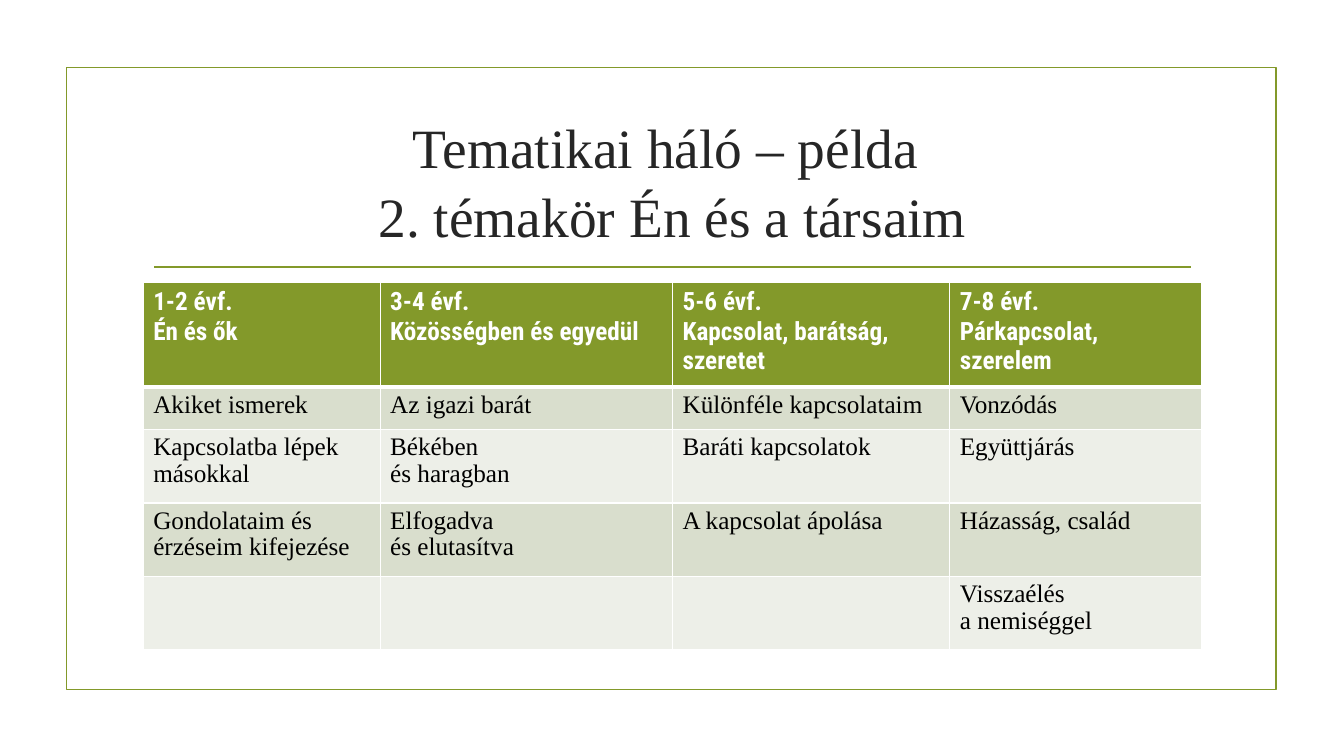
from lxml.etree import SubElement
from pptx import Presentation
from pptx.dml.color import RGBColor
from pptx.enum.shapes import MSO_CONNECTOR, MSO_SHAPE
from pptx.enum.text import MSO_ANCHOR, MSO_AUTO_SIZE, PP_ALIGN
from pptx.oxml.ns import qn
from pptx.util import Inches, Pt

GREEN = RGBColor(0x83, 0x99, 0x2A)
SAGE = RGBColor(0xD9, 0xDE, 0xCD)
PALE = RGBColor(0xED, 0xEF, 0xE8)
WHITE = RGBColor(0xFF, 0xFF, 0xFF)
BLACK = RGBColor(0, 0, 0)
DARK = RGBColor(0x26, 0x26, 0x26)
SERIF = "Times New Roman"
SANS = "Roboto Condensed"

WIDTHS = [2.35, 2.9, 2.75, 2.5]
HEIGHTS = [1.04, 0.42, 0.73, 0.73, 0.73]
# In the cells, \n starts a paragraph and \v breaks a line
ROWS = [
    ["1-2 évf.\nÉn és ők", "3-4 évf.\nKözösségben és egyedül",
     "5-6 évf.\nKapcsolat, barátság, szeretet",
     "7-8 évf.\nPárkapcsolat, szerelem"],
    ["Akiket ismerek", "Az igazi barát", "Különféle kapcsolataim", "Vonzódás"],
    ["Kapcsolatba lépek másokkal", "Békében \vés haragban",
     "Baráti kapcsolatok", "Együttjárás"],
    ["Gondolataim és érzéseim kifejezése", "Elfogadva \vés elutasítva",
     "A kapcsolat ápolása", "Házasság, család"],
    ["", "", "", "Visszaélés \va nemiséggel"],
]


def set_font(font, name, size, color, bold=False):
    font.name = name
    font.size = Pt(size)
    font.color.rgb = color
    font.bold = bold


def add_frame(slide, left, top, width, height):
    # Green outline around the slide
    frame = slide.shapes.add_shape(MSO_SHAPE.RECTANGLE, Inches(left), Inches(top),
                                   Inches(width), Inches(height))
    frame.shadow.inherit = False
    frame.fill.background()
    frame.line.color.rgb = GREEN
    frame.line.width = Pt(1.25)

    # Rule under the title
    y = Inches(top + 1.98)
    rule = slide.shapes.add_connector(MSO_CONNECTOR.STRAIGHT, Inches(left + 0.87), y,
                                      Inches(left + width - 0.85), y)
    rule.line.color.rgb = GREEN
    rule.line.width = Pt(1.25)
    SubElement(rule._element.spPr, qn("a:effectLst"))


def fill_title(slide, left, top, width, height):
    title = slide.shapes.title
    title.left, title.top = Inches(left), Inches(top)
    title.width, title.height = Inches(width), Inches(height)
    frame = title.text_frame
    frame.text = "Tematikai háló – példa \v2. témakör Én és a társaim"
    frame.auto_size = MSO_AUTO_SIZE.NONE
    frame.word_wrap = True
    frame.vertical_anchor = MSO_ANCHOR.MIDDLE
    para = frame.paragraphs[0]
    para.alignment = PP_ALIGN.CENTER
    para.line_spacing = 1.03
    for run in para.runs:
        set_font(run.font, SERIF, 39.6, DARK)


def set_edges(cell, head):
    # White cell borders, thicker under the header
    props = cell._tc.get_or_add_tcPr()
    for i, tag in enumerate(["a:lnL", "a:lnR", "a:lnT", "a:lnB"]):
        width = Pt(3) if head and tag == "a:lnB" else Pt(1)
        edge = props.makeelement(qn(tag), {"w": str(width)})
        fill = SubElement(edge, qn("a:solidFill"))
        SubElement(fill, qn("a:srgbClr"), val=str(WHITE))
        props.insert(i, edge)


def fill_cell(cell, text, row):
    head = row == 0
    cell.fill.solid()
    cell.fill.fore_color.rgb = GREEN if head else SAGE if row % 2 else PALE
    set_edges(cell, head)
    cell.text_frame.text = text
    for para in cell.text_frame.paragraphs:
        para.line_spacing = 1.0 if head else 0.95
        if not para.runs:
            para.font.size = Pt(18)
        for run in para.runs:
            set_font(run.font, SANS if head else SERIF, 18,
                     WHITE if head else BLACK, head)


def add_grid(slide, left, top):
    table = slide.shapes.add_table(
        len(ROWS), len(WIDTHS), Inches(left), Inches(top),
        Inches(sum(WIDTHS)), Inches(sum(HEIGHTS))).table
    for col, width in zip(table.columns, WIDTHS):
        col.width = Inches(width)
    for r, texts in enumerate(ROWS):
        table.rows[r].height = Inches(HEIGHTS[r])
        for c, text in enumerate(texts):
            fill_cell(table.cell(r, c), text, r)


def main():
    deck = Presentation()
    deck.slide_width, deck.slide_height = Inches(13.33), Inches(7.5)
    slide = deck.slides.add_slide(deck.slide_layouts[5])
    add_frame(slide, 0.66, 0.67, 12, 6.17)
    fill_title(slide, 1.42, 1.07, 10.5, 1.43)
    add_grid(slide, 1.42, 2.8)
    deck.save("out.pptx")


if __name__ == "__main__":
    main()
